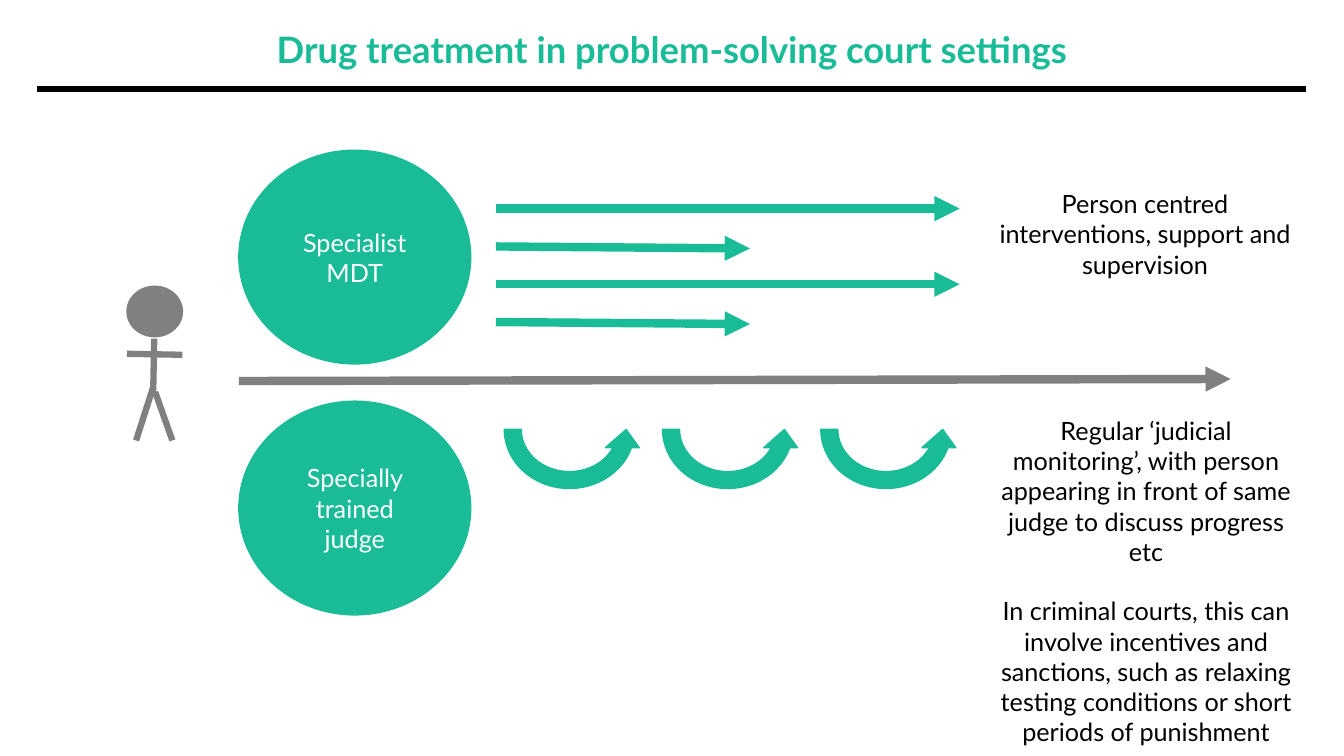
"""Build a slide on drug treatment in problem-solving courts."""
from lxml import etree
from pptx import Presentation
from pptx.dml.color import RGBColor
from pptx.enum.shapes import MSO_CONNECTOR, MSO_SHAPE
from pptx.enum.text import MSO_ANCHOR, MSO_AUTO_SIZE, PP_ALIGN
from pptx.oxml.ns import qn
from pptx.util import Emu, Pt

OVAL, CURVE = MSO_SHAPE.OVAL, MSO_SHAPE.CIRCULAR_ARROW
LINE = MSO_CONNECTOR.STRAIGHT
CENTER = PP_ALIGN.CENTER
TOP, MIDDLE = MSO_ANCHOR.TOP, MSO_ANCHOR.MIDDLE
FIXED = MSO_AUTO_SIZE.NONE
PX = 9144
FONT = "Lato"
COLORS = {"green": "1ABC97", "gray": "808080", "black": "000000", "white": "FFFFFF"}

TITLE = "Drug treatment in problem-solving court settings"
TEAMS = [("Specialist MDT", 149), ("Specially trained judge", 398)]
NOTES = [
    ("Person centred interventions, support and supervision", (976, 182, 320, 101)),
    ("Regular ‘judicial monitoring’, with person appearing in front of same "
     "judge to discuss progress etc", (978, 407, 318, 162)),
    ("In criminal courts, this can involve incentives and sanctions, such as "
     "relaxing testing conditions or short periods of punishment",
     (978, 586, 318, 162)),
]
HEAD = (126, 284, 55, 50)
LIMBS = [(153, 336, 152, 389), (181, 352, 126, 351),
         (152, 384, 135, 437), (154, 389, 171, 437)]
RULE = (37, 88, 1296, 88)
COURSE = (237, 378, 1221, 376)
PATHS = [(952, 0), (744, 2)] * 2
PATH_X, PATH_Y, PATH_GAP = 492, 207, 37.5
CURVES, CURVE_GAP = 3, 157


def px(*nums):
    return [Emu(round(n * PX)) for n in nums]


def rgb(name):
    return RGBColor.from_string(COLORS[name])


def write(shape, text, size=18, color="black", bold=False, anchor=TOP, space=None):
    frame = shape.text_frame
    frame.word_wrap = True
    frame.auto_size = FIXED
    frame.vertical_anchor = anchor
    para = frame.paragraphs[0]
    para.alignment = CENTER
    para.line_spacing = space
    run = para.add_run()
    run.text = text
    font = run.font
    font.name, font.size, font.bold = FONT, Pt(size), bold
    font.color.rgb = rgb(color)


def draw(slide, kind, box, color):
    shape = slide.shapes.add_shape(kind, *px(*box))
    shape.shadow.inherit = False
    shape.fill.solid()
    shape.fill.fore_color.rgb = rgb(color)
    shape.line.color.rgb = rgb(color)
    shape.line.width = Pt(1)
    return shape


def link(slide, ends, color, width, arrow=False):
    line = slide.shapes.add_connector(LINE, *px(*ends))
    line.line.color.rgb = rgb(color)
    line.line.width = Pt(width)
    if arrow:
        tail = etree.SubElement(line.line._get_or_add_ln(), qn("a:tailEnd"))
        tail.set("type", "triangle")
    etree.SubElement(line._element.spPr, qn("a:effectLst"))


def main():
    deck = Presentation()
    deck.slide_width, deck.slide_height = px(1333.33, 750)
    slide = deck.slides.add_slide(deck.slide_layouts[5])

    title = slide.shapes.title
    title.left, title.top, title.width, title.height = px(0, 18, 1334, 67)
    write(title, TITLE, size=26, color="green", bold=True, anchor=MIDDLE, space=0.9)
    link(slide, RULE, "black", 4.5)
    link(slide, COURSE, "gray", 6, arrow=True)

    draw(slide, OVAL, HEAD, "gray")
    for limb in LIMBS:
        link(slide, limb, "gray", 4.5)

    for text, top in TEAMS:
        team = draw(slide, OVAL, (237, top, 230, 212), "green")
        write(team, text, color="white", anchor=MIDDLE)

    for i, (end, drop) in enumerate(PATHS):
        y = PATH_Y + i * PATH_GAP
        link(slide, (PATH_X, y, end, y + drop), "green", 6, arrow=True)

    for i in range(CURVES):
        box = (PATH_X + i * CURVE_GAP, 359, 146, 134)
        curve = draw(slide, CURVE, box, "green")
        curve.rotation = 180
        curve._element.spPr.xfrm.set("flipH", "1")

    for text, box in NOTES:
        write(slide.shapes.add_textbox(*px(*box)), text)

    deck.save("out.pptx")


if __name__ == "__main__":
    main()
